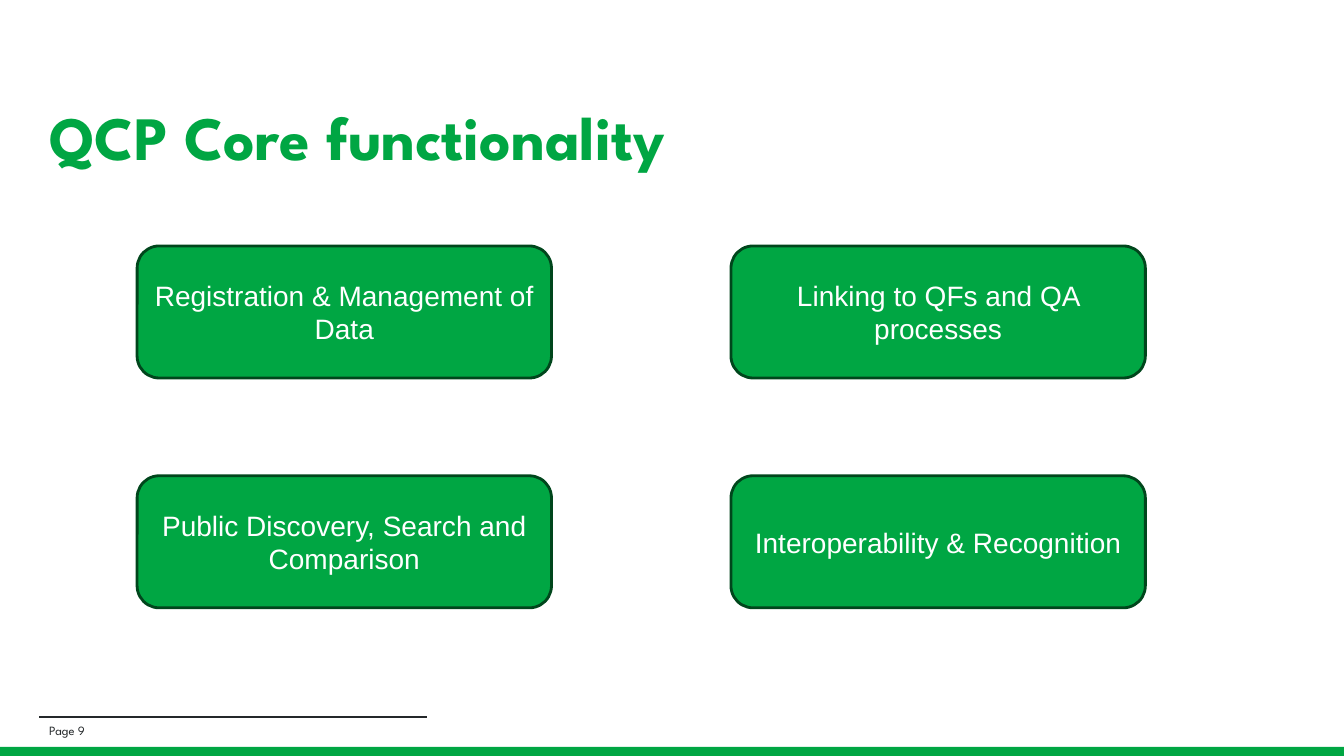
import dataclasses
import typing

import lxml.etree
import pptx
import pptx.dml.color
import pptx.enum.shapes
import pptx.enum.text
import pptx.oxml.ns
import pptx.util

Inches = pptx.util.Inches
COLORS = {"green": "00A643", "dark_green": "00461C", "ink": "24282A", "white": "FFFFFF"}
HEADING_FONT = "League Spartan"
LEFT_MARGIN = 0.39


@dataclasses.dataclass(frozen=True)
class Feature:
    label: str
    column: int
    row: int


FEATURES = [
    Feature("Registration & Management of Data", 0, 0),
    Feature("Linking to QFs and QA processes", 1, 0),
    Feature("Public Discovery, Search and Comparison", 0, 1),
    Feature("Interoperability & Recognition", 1, 1),
]


def color(name: str) -> pptx.dml.color.RGBColor:
    return pptx.dml.color.RGBColor.from_string(COLORS[name])


def write(
    frame: typing.Any,
    text: str,
    font: dict[str, typing.Any],
    ink: str,
    paragraph_format: dict[str, typing.Any],
) -> None:
    frame.text = text
    frame.word_wrap = True
    frame.auto_size = pptx.enum.text.MSO_AUTO_SIZE.NONE
    frame.vertical_anchor = pptx.enum.text.MSO_ANCHOR.MIDDLE
    paragraph = frame.paragraphs[0]
    for target, values in ((paragraph, paragraph_format), (paragraph.runs[0].font, font)):
        for attribute, value in values.items():
            setattr(target, attribute, value)
    paragraph.runs[0].font.color.rgb = color(ink)


def add_footer(slide: typing.Any) -> None:
    bar = slide.shapes.add_shape(
        pptx.enum.shapes.MSO_SHAPE.RECTANGLE,
        Inches(-0.03), Inches(7.41), Inches(13.4), Inches(0.13),
    )
    bar.shadow.inherit = False
    bar.fill.solid()
    bar.fill.fore_color.rgb = color("green")
    bar.line.fill.background()

    rule = slide.shapes.add_connector(
        pptx.enum.shapes.MSO_CONNECTOR.STRAIGHT,
        Inches(LEFT_MARGIN), Inches(7.11), Inches(4.24), Inches(7.11),
    )
    rule.line.color.rgb = color("ink")
    rule.line.width = pptx.util.Pt(1.5)
    lxml.etree.SubElement(rule._element.spPr, pptx.oxml.ns.qn("a:effectLst"))

    page_number = slide.shapes.add_textbox(
        Inches(LEFT_MARGIN), Inches(7.15), Inches(4.06), Inches(0.19)
    )
    write(
        page_number.text_frame, "Page 9",
        {"name": HEADING_FONT, "size": pptx.util.Pt(9)}, "ink", {},
    )


def add_title(slide: typing.Any) -> None:
    title = slide.shapes.title
    bounds = {"left": LEFT_MARGIN, "top": 0.67, "width": 12.54, "height": 1.45}
    for attribute, length in bounds.items():
        setattr(title, attribute, Inches(length))
    write(
        title.text_frame, "QCP Core functionality",
        {"name": HEADING_FONT, "size": pptx.util.Pt(44), "bold": True}, "green",
        {"alignment": pptx.enum.text.PP_ALIGN.LEFT, "line_spacing": 0.9},
    )


def add_feature(slide: typing.Any, feature: Feature) -> None:
    card = slide.shapes.add_shape(
        pptx.enum.shapes.MSO_SHAPE.ROUNDED_RECTANGLE,
        Inches(1.36 + 5.89 * feature.column), Inches(2.44 + 2.28 * feature.row),
        Inches(4.11), Inches(1.31),
    )
    card.shadow.inherit = False
    card.fill.solid()
    card.fill.fore_color.rgb = color("green")
    card.line.color.rgb = color("dark_green")
    card.line.width = pptx.util.Pt(2)
    write(
        card.text_frame, feature.label,
        {"name": "Arial", "size": pptx.util.Pt(20)}, "white",
        {"alignment": pptx.enum.text.PP_ALIGN.CENTER},
    )


def main() -> None:
    presentation = pptx.Presentation()
    presentation.slide_width = Inches(13.33)
    presentation.slide_height = Inches(7.5)
    slide = presentation.slides.add_slide(presentation.slide_layouts.get_by_name("Title Only"))
    slide.background.fill.solid()
    slide.background.fill.fore_color.rgb = color("white")
    add_footer(slide)
    add_title(slide)
    for feature in FEATURES:
        add_feature(slide, feature)
    presentation.save("out.pptx")


if __name__ == "__main__":
    main()
